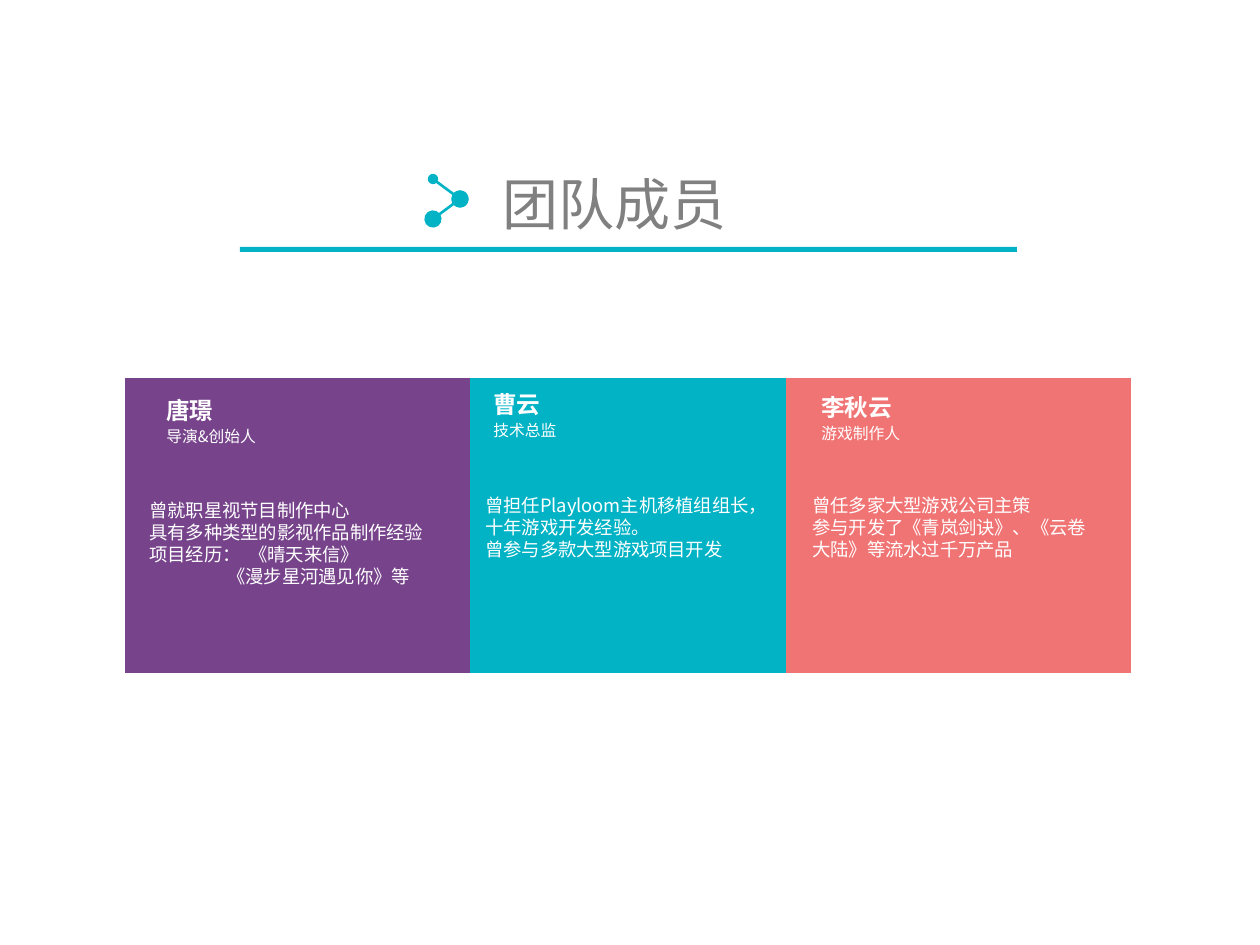
from dataclasses import dataclass

from lxml import etree
from pptx import Presentation
from pptx.dml.color import RGBColor
from pptx.enum.shapes import MSO_CONNECTOR, MSO_SHAPE
from pptx.enum.text import MSO_AUTO_SIZE, PP_ALIGN
from pptx.oxml.ns import qn
from pptx.util import Emu, Pt

RECTANGLE = MSO_SHAPE.RECTANGLE
STRAIGHT = MSO_CONNECTOR.STRAIGHT
LEFT, CENTER = PP_ALIGN.LEFT, PP_ALIGN.CENTER
FIT_SHAPE = MSO_AUTO_SIZE.SHAPE_TO_FIT_TEXT
PX_PER_INCH = 126


def px(length):
    return Emu(round(length * 914400 / PX_PER_INCH))


@dataclass(frozen=True)
class Theme:
    teal: str = "01B3C5"
    coral: str = "F17475"
    purple: str = "77448C"
    gray: str = "808080"
    white: str = "FFFFFF"
    title_font: str = "Arial"
    body_font: str = "Noto Sans CJK SC"
    title_size: float = 32
    name_size: float = 13.5
    role_size: float = 9
    body_size: float = 10.5


class SlideBuilder:
    def __init__(self, slide, theme):
        self.slide = slide
        self.theme = theme

    def rectangle(self, left, top, width, height, color):
        shape = self.slide.shapes.add_shape(
            RECTANGLE, px(left), px(top), px(width), px(height))
        shape.shadow.inherit = False
        shape.fill.solid()
        shape.fill.fore_color.rgb = RGBColor.from_string(color)
        shape.line.fill.background()

    def dotted_line(self, start, end, head_size, tail_size):
        connector = self.slide.shapes.add_connector(
            STRAIGHT, *map(px, start), *map(px, end))
        connector.line.color.rgb = RGBColor.from_string(self.theme.teal)
        connector.line.width = Pt(1.5)
        properties = connector._element.spPr
        line = properties.find(qn("a:ln"))
        for tag, size in (("a:headEnd", head_size), ("a:tailEnd", tail_size)):
            etree.SubElement(line, qn(tag), type="oval", w=size, len=size)
        etree.SubElement(properties, qn("a:effectLst"))

    def text(self, left, top, width, height, lines, size, color=None,
             font=None, bold=False, align=LEFT, indents=None, tabs=None):
        box = self.slide.shapes.add_textbox(px(left), px(top), px(width), px(height))
        frame = box.text_frame
        frame.word_wrap = True
        frame.auto_size = FIT_SHAPE
        for index, line in enumerate(lines):
            paragraph = frame.paragraphs[0] if index == 0 else frame.add_paragraph()
            paragraph.text = line
            paragraph.alignment = align
            properties = paragraph._p.get_or_add_pPr()
            if indents and index in indents:
                properties.set("marL", str(px(indents[index])))
                properties.set("indent", "0")
            if tabs and index in tabs:
                tab_list = etree.SubElement(properties, qn("a:tabLst"))
                etree.SubElement(tab_list, qn("a:tab"), pos=str(px(tabs[index])), algn="l")
            paragraph.font.size = Pt(size)
            paragraph.font.bold = bold
            paragraph.font.color.rgb = RGBColor.from_string(color or self.theme.white)
            paragraph.font.name = font or self.theme.body_font
            etree.SubElement(properties.find(qn("a:defRPr")), qn("a:ea"),
                             typeface=self.theme.body_font)

    def header(self, title):
        theme = self.theme
        self.rectangle(240, 247, 777, 5, theme.teal)
        self.text(475, 163, 280, 77, [title], theme.title_size, theme.gray,
                  theme.title_font, align=CENTER)
        top_dot, middle_dot, bottom_dot = (433, 179), (460, 199), (433, 219)
        self.dotted_line(top_dot, middle_dot, "med", "lg")
        self.dotted_line(middle_dot, bottom_dot, "lg", "lg")

    def member(self, card_left, color, name, role, biography, name_at, body_at,
               body_width=302, **layout):
        theme = self.theme
        name_left, name_top = name_at
        self.rectangle(card_left, 378, 345, 295, color)
        self.text(name_left, name_top, 101, 42, [name], theme.name_size, bold=True)
        self.text(name_left, name_top + 31, 123, 32, [role], theme.role_size)
        self.text(*body_at, body_width, 79, biography, theme.body_size, **layout)


def main():
    presentation = Presentation()
    presentation.slide_width = px(1260)
    presentation.slide_height = px(945)
    theme = Theme()
    slide = presentation.slides.add_slide(presentation.slide_layouts[6])
    builder = SlideBuilder(slide, theme)
    builder.header("团队成员")
    builder.member(456, theme.teal, "曹云", "技术总监",
                   ["曾担任Playloom主机移植组组长，十年游戏开发经验。",
                    "曾参与多款大型游戏项目开发"],
                   (481, 384), (473, 488))
    builder.member(786, theme.coral, "李秋云", "游戏制作人",
                   ["曾任多家大型游戏公司主策",
                    "参与开发了《青岚剑诀》、《云卷大陆》等流水过千万产品"],
                   (809, 387), (800, 488))
    builder.member(125, theme.purple, "唐璟", "导演&创始人",
                   ["曾就职星视节目制作中心",
                    "具有多种类型的影视作品制作经验",
                    "项目经历：\t《晴天来信》",
                    "《漫步星河遇见你》等"],
                   (154, 390), (137, 493), 315, indents={3: 78}, tabs={2: 100})
    presentation.save("out.pptx")


if __name__ == "__main__":
    main()
